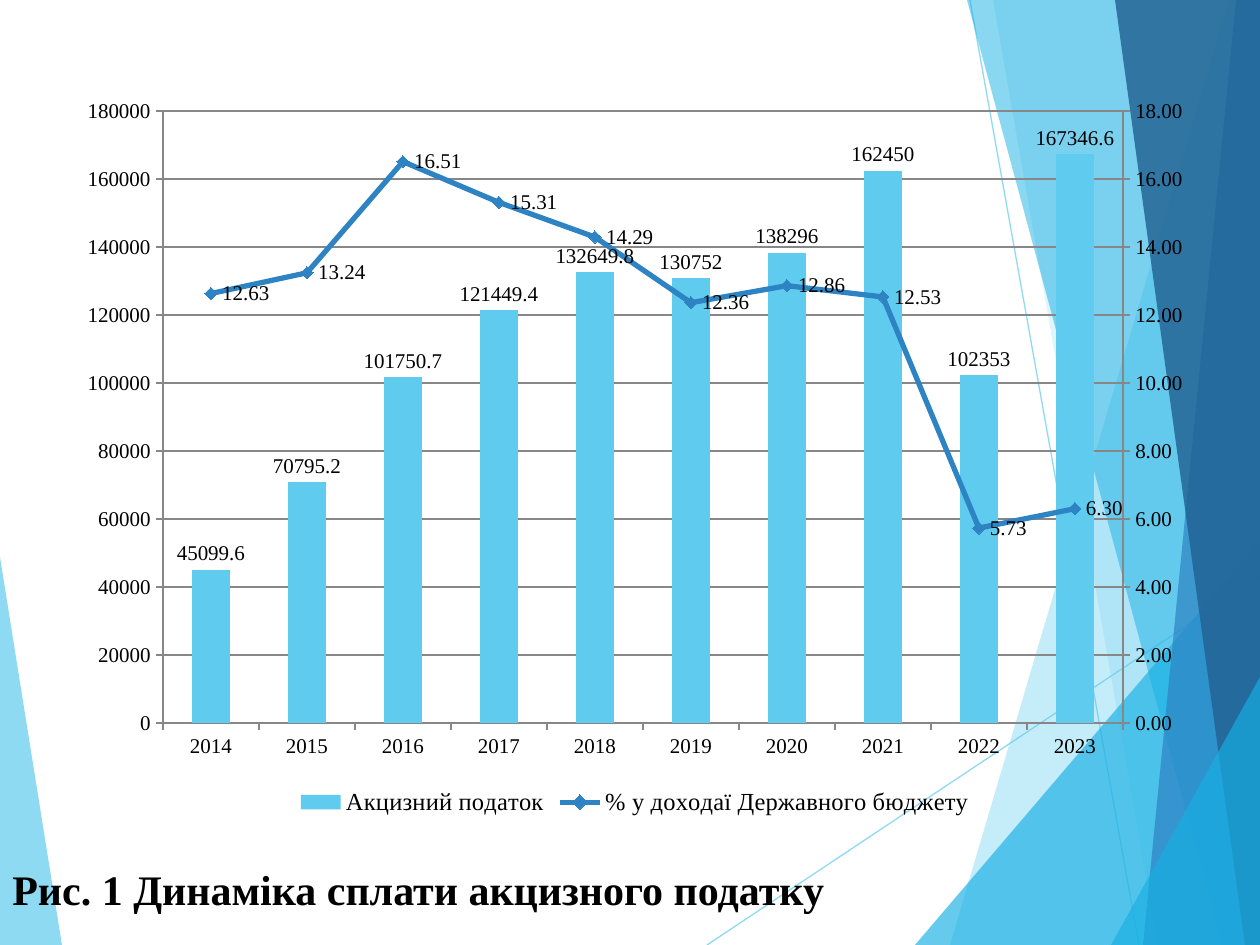
from copy import deepcopy

from pptx import Presentation
from pptx.chart.axis import CategoryAxis, ValueAxis
from pptx.chart.data import CategoryChartData
from pptx.dml.color import RGBColor
from pptx.enum.chart import (XL_CHART_TYPE, XL_LABEL_POSITION, XL_LEGEND_POSITION,
                             XL_MARKER_STYLE, XL_TICK_MARK)
from pptx.enum.shapes import MSO_CONNECTOR
from pptx.enum.text import MSO_ANCHOR, MSO_AUTO_SIZE
from pptx.oxml import parse_xml
from pptx.oxml.ns import nsdecls, qn
from pptx.oxml.xmlchemy import OxmlElement
from pptx.util import Pt

COLUMN = XL_CHART_TYPE.COLUMN_CLUSTERED
LABEL_ABOVE, LABEL_RIGHT = XL_LABEL_POSITION.OUTSIDE_END, XL_LABEL_POSITION.RIGHT
LEGEND_BOTTOM = XL_LEGEND_POSITION.BOTTOM
DIAMOND = XL_MARKER_STYLE.DIAMOND
TICK_OUT, TICK_NONE = XL_TICK_MARK.OUTSIDE, XL_TICK_MARK.NONE
STRAIGHT = MSO_CONNECTOR.STRAIGHT
MIDDLE, FIT_SHAPE = MSO_ANCHOR.MIDDLE, MSO_AUTO_SIZE.SHAPE_TO_FIT_TEXT

SCALE = 914400 / 126
PAGE = (0, 0, 1260, 945)
CHART = (64, 86, 1142, 735)
CAPTION = (0, 857, 845, 64)
FONT = "Times New Roman"
COLORS = {"sky": "5FCBEF", "cyan": "17B0E4", "blue": "2E83C3",
          "navy": "226292", "axis": "878787", "text": "000000"}

LEFT_FACET = ("sky", 70, [(0, 557), (62, 945), (0, 945)])
RAYS = [((707, 945), (1260, 577)), ((970, 0), (1139, 945))]
RIGHT_FACETS = [
    ("sky", 36, [(1229, 0), (950, 945), (1260, 945), (1260, 0)]),
    ("sky", 20, [(993, 0), (1158, 945), (1260, 945), (1260, 0)]),
    ("cyan", 66, [(915, 945), (1260, 541), (1260, 945)]),
    ("cyan", 50, [(967, 0), (1222, 945), (1260, 945), (1260, 0)]),
    ("blue", 70, [(1236, 0), (1143, 945), (1260, 945), (1260, 0)]),
    ("navy", 82, [(1115, 0), (1245, 945), (1260, 945), (1260, 0)]),
    ("cyan", 66, [(1111, 945), (1260, 677), (1260, 945)]),
]

YEARS = [str(year) for year in range(2014, 2024)]
TAX = [45099.6, 70795.2, 101750.7, 121449.4, 132649.8,
       130752, 138296, 162450, 102353, 167346.6]
SHARE = [12.63, 13.24, 16.51, 15.31, 14.29, 12.36, 12.86, 12.53, 5.73, 6.3]


def px(*lengths):
    """Turn pixel lengths into EMU."""
    return [round(length * SCALE) for length in lengths]


def rgb(name):
    """Return a named colour."""
    return RGBColor.from_string(COLORS[name])


def set_format(target, values):
    """Set each attribute in a dict of format values."""
    for name, value in values.items():
        setattr(target, name, value)


def set_opacity(element, percent):
    """Make the colour inside an element partly transparent."""
    alpha = OxmlElement("a:alpha")
    alpha.set("val", str(percent * 1000))
    next(element.iter(qn("a:srgbClr"))).append(alpha)


def add_facet(page, box, color, opacity, points):
    """Draw one translucent polygon relative to the box."""
    corners = [(box[0] + x, box[1] + y) for x, y in points]
    builder = page.shapes.build_freeform(*corners[0], scale=SCALE)
    builder.add_line_segments(corners[1:], close=True)
    facet = builder.convert_to_shape()
    facet.shadow.inherit = False
    facet.fill.solid()
    facet.fill.fore_color.rgb = rgb(color)
    set_opacity(facet._element.spPr, opacity)
    facet.line.fill.background()


def add_ray(page, box, start, end):
    """Draw one thin translucent line relative to the box."""
    left, top = box[:2]
    ray = page.shapes.add_connector(
        STRAIGHT, *px(left + start[0], top + start[1], left + end[0], top + end[1]))
    ray.line.color.rgb = rgb("sky")
    ray.line.width = Pt(0.75)
    properties = ray._element.spPr
    set_opacity(properties, 70)
    properties.append(OxmlElement("a:effectLst"))


def add_backdrop(page, box):
    """Draw the facets and rays behind the chart."""
    add_facet(page, box, *LEFT_FACET)
    for start, end in RAYS:
        add_ray(page, box, start, end)
    for facet in RIGHT_FACETS:
        add_facet(page, box, *facet)


def format_line(line, color, points):
    """Give a line its colour and width."""
    line.color.rgb = rgb(color)
    line.width = Pt(points)


def format_labels(plot, number_format, position):
    """Show the values of a plot."""
    plot.has_data_labels = True
    set_format(plot.data_labels, {
        "show_value": True, "number_format": number_format,
        "number_format_is_linked": False, "position": position})


def format_axes(chart):
    """Format the category axis and the left value axis."""
    for axis in (chart.category_axis, chart.value_axis):
        set_format(axis, {"major_tick_mark": TICK_OUT, "minor_tick_mark": TICK_NONE})
        format_line(axis.format.line, "axis", 1)
    set_format(chart.value_axis, {"minimum_scale": 0, "maximum_scale": 180000,
                                  "major_unit": 20000, "has_major_gridlines": True})
    set_format(chart.value_axis.tick_labels,
               {"number_format": "0", "number_format_is_linked": False})
    format_line(chart.value_axis.major_gridlines.format.line, "axis", 0.75)


def add_right_axis(chart):
    """Move the second series to a line plot on a right-hand axis."""
    area = chart._chartSpace.chart.plotArea
    bars = area.find(qn("c:barChart"))
    series = bars.findall(qn("c:ser"))[1]
    for bar_only in series.findall(qn("c:invertIfNegative")):
        series.remove(bar_only)
    lines = parse_xml(
        f'<c:lineChart {nsdecls("c")}><c:grouping val="standard"/><c:varyColors val="0"/>'
        '<c:marker val="1"/><c:axId val="5001"/><c:axId val="5002"/></c:lineChart>')
    lines.insert(2, series)
    bars.addnext(lines)

    values = area.find(qn("c:valAx"))
    right, hidden = deepcopy(values), deepcopy(area.find(qn("c:catAx")))
    values.addnext(hidden)
    hidden.addnext(right)
    for element, own, other in ((hidden, "5001", "5002"), (right, "5002", "5001")):
        element.find(qn("c:axId")).set("val", own)
        element.find(qn("c:crossAx")).set("val", other)
    right.find(qn("c:axPos")).set("val", "r")
    right.find(qn("c:crosses")).set("val", "max")
    CategoryAxis(hidden).visible = False
    axis = ValueAxis(right)
    set_format(axis, {"maximum_scale": 18, "major_unit": 2, "has_major_gridlines": False})
    axis.tick_labels.number_format = "0.00"


def frame_plot(chart):
    """Place the plot area and give it a border."""
    area = chart._chartSpace.chart.plotArea
    for layout in area.findall(qn("c:layout")):
        area.remove(layout)
    places = "".join(f'<c:{name} val="{value}"/>' for name, value in (
        ("layoutTarget", "inner"), ("xMode", "edge"), ("yMode", "edge"),
        ("x", 99 / CHART[2]), ("y", 25 / CHART[3]),
        ("w", 960 / CHART[2]), ("h", 612 / CHART[3])))
    area.insert(0, parse_xml(f'<c:layout {nsdecls("c")}><c:manualLayout>{places}'
                             '</c:manualLayout></c:layout>'))
    area.append(parse_xml(
        f'<c:spPr {nsdecls("c", "a")}><a:noFill/><a:ln w="12700"><a:solidFill>'
        f'<a:srgbClr val="{COLORS["axis"]}"/></a:solidFill></a:ln></c:spPr>'))


def add_tax_chart(page, box):
    """Add the chart of excise tax and its share of the budget."""
    data = CategoryChartData()
    data.categories = YEARS
    data.add_series("Акцизний податок", TAX)
    data.add_series("% у доходаї Державного бюджету", SHARE, number_format="0.00")
    chart = page.shapes.add_chart(COLUMN, *px(*box), data).chart
    set_format(chart, {"has_title": False, "has_legend": True})
    set_format(chart.font, {"name": FONT, "size": Pt(12)})
    chart.font.color.rgb = rgb("text")
    set_format(chart.legend, {"position": LEGEND_BOTTOM, "include_in_layout": False})
    set_format(chart.legend.font, {"name": FONT, "size": Pt(14)})
    format_axes(chart)
    add_right_axis(chart)
    frame_plot(chart)

    bars, lines = chart.plots
    set_format(bars, {"gap_width": 150, "vary_by_categories": False})
    format_labels(bars, "General", LABEL_ABOVE)
    format_labels(lines, "0.00", LABEL_RIGHT)
    bar_fill = bars.series[0].format.fill
    bar_fill.solid()
    bar_fill.fore_color.rgb = rgb("sky")
    share = lines.series[0]
    share.smooth = False
    format_line(share.format.line, "blue", 3)
    set_format(share.marker, {"style": DIAMOND, "size": 7})
    share.marker.format.fill.solid()
    share.marker.format.fill.fore_color.rgb = rgb("blue")
    format_line(share.marker.format.line, "blue", 0.75)


def add_caption(page, box):
    """Add the caption under the chart."""
    frame = page.shapes.add_textbox(*px(*box)).text_frame
    set_format(frame, {"word_wrap": False, "auto_size": FIT_SHAPE,
                       "vertical_anchor": MIDDLE})
    span = frame.paragraphs[0].add_run()
    span.text = "Рис. 1 Динаміка сплати акцизного податку"
    set_format(span.font, {"name": FONT, "size": Pt(24), "bold": True})
    span.font.color.rgb = rgb("text")


def main():
    """Build the slide and save the deck."""
    deck = Presentation()
    deck.slide_width, deck.slide_height = px(*PAGE[2:])
    page = deck.slides.add_slide(deck.slide_layouts[6])
    add_backdrop(page, PAGE)
    add_caption(page, CAPTION)
    add_tax_chart(page, CHART)
    deck.save("out.pptx")


if __name__ == "__main__":
    main()
